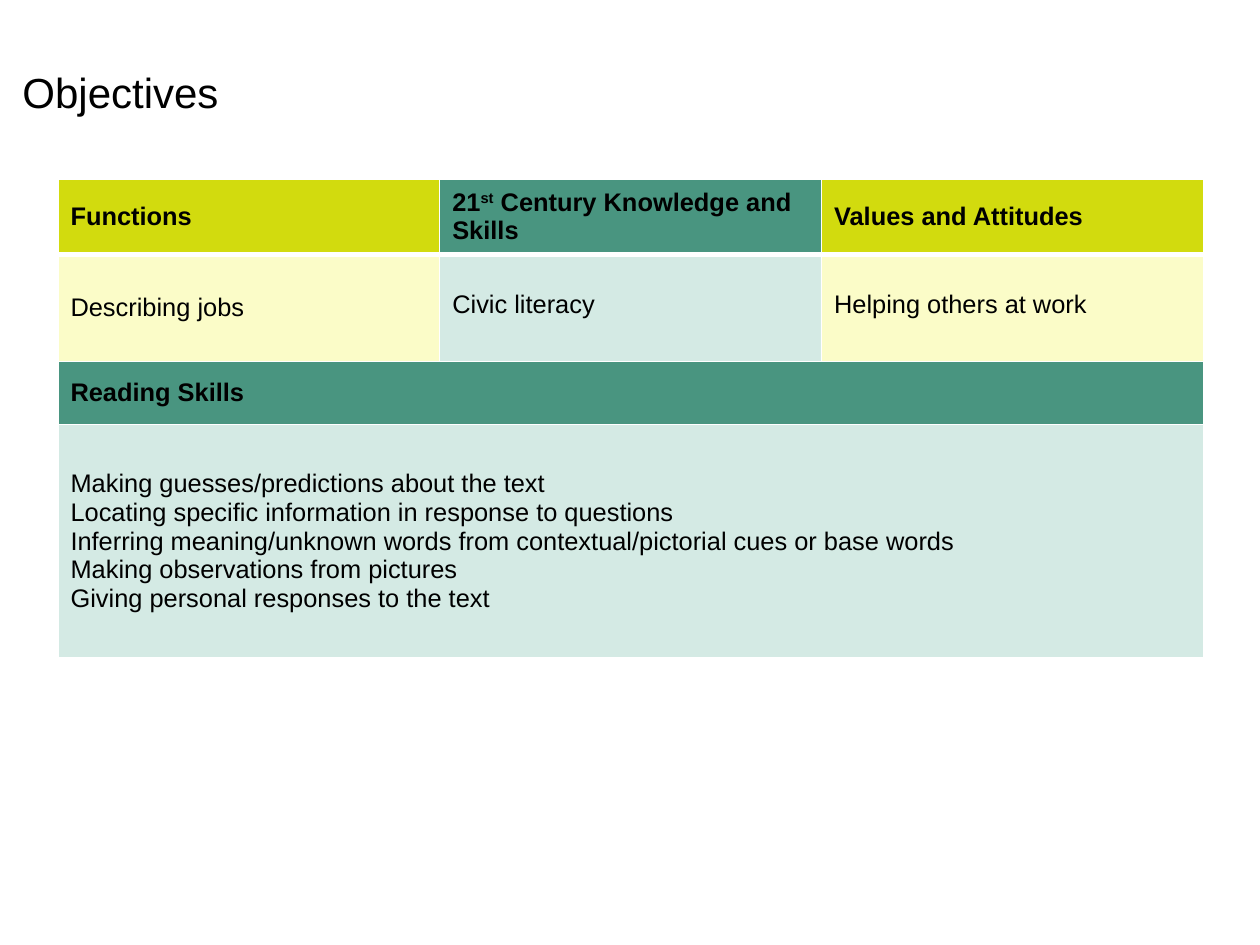
import pptx
import pptx.util
from lxml import etree
from pptx.dml.color import RGBColor
from pptx.enum.text import MSO_ANCHOR
from pptx.oxml.ns import qn

BLACK = RGBColor(0x00, 0x00, 0x00)
WHITE = RGBColor(0xFF, 0xFF, 0xFF)
LIME = RGBColor(0xD2, 0xDB, 0x0E)
CREAM = RGBColor(0xFB, 0xFC, 0xC8)
GREEN = RGBColor(0x49, 0x95, 0x80)
MINT = RGBColor(0xD4, 0xEA, 0xE4)

Inches = pptx.util.Inches
SLIDE_W, SLIDE_H = 10, 7.5
ROW_HEIGHTS = [0.6, 0.85, 0.5, 1.85]

HEADERS = [
    ("Functions", LIME),
    ([("21", False), ("st", True), (" Century Knowledge and Skills", False)], GREEN),
    ("Values and Attitudes", LIME),
]
# Text, fill and bottom inset of each objective
OBJECTIVES = [
    ("Describing jobs", CREAM, 0.05),
    ("Civic literacy", MINT, 0.11),
    ("Helping others at work", CREAM, 0.11),
]
READING_SKILLS = [
    "Making guesses/predictions about the text",
    "Locating specific information in response to questions",
    "Inferring meaning/unknown words from contextual/pictorial cues or base words",
    "Making observations from pictures",
    "Giving personal responses to the text",
]


def add_text(p, text, size=14.5, bold=False):
    """Fill a paragraph with a string, or with (string, superscript) pairs."""
    pieces = [(text, False)] if isinstance(text, str) else text
    for piece, superscript in pieces:
        r = p.add_run()
        r.text = piece
        r.font.name = "Arial"
        r.font.size = pptx.util.Pt(size)
        r.font.bold = bold
        r.font.color.rgb = BLACK
        if superscript:
            r._r.get_or_add_rPr().set("baseline", "30000")


def set_borders(cell, bottom=1):
    tc_pr = cell._tc.get_or_add_tcPr()
    widths = {"a:lnL": 1, "a:lnR": 1, "a:lnT": 1, "a:lnB": bottom}
    for i, (tag, width) in enumerate(widths.items()):
        ln = etree.Element(qn(tag), w=str(pptx.util.Pt(width)))
        fill = etree.SubElement(ln, qn("a:solidFill"))
        etree.SubElement(fill, qn("a:srgbClr"), val=str(WHITE))
        tc_pr.insert(i, ln)


def fill_cell(cell, lines, color, bold=False, inset=0.05, border=1):
    cell.fill.solid()
    cell.fill.fore_color.rgb = color
    cell.vertical_anchor = MSO_ANCHOR.MIDDLE
    cell.margin_bottom = Inches(inset)
    set_borders(cell, border)
    tf = cell.text_frame
    for i, line in enumerate(lines):
        p = tf.add_paragraph() if i else tf.paragraphs[0]
        add_text(p, line, bold=bold)


def add_title(slide, left, top, width, height):
    sp = slide.shapes.add_textbox(*map(Inches, (left, top, width, height)))
    tf = sp.text_frame
    tf.word_wrap = False
    add_text(tf.paragraphs[0], "Objectives", size=24)


def add_objectives_table(slide, left, top, width):
    height = sum(ROW_HEIGHTS)
    frame = slide.shapes.add_table(
        4, 3, *map(Inches, (left, top, width, height)))
    table = frame.table
    table.horz_banding = False
    for row, row_height in zip(table.rows, ROW_HEIGHTS):
        row.height = Inches(row_height)
    for column in table.columns:
        column.width = Inches(width / 3)

    # Three columns of objectives
    for i, (text, color) in enumerate(HEADERS):
        fill_cell(table.cell(0, i), [text], color, bold=True, border=3)
    for i, (text, color, inset) in enumerate(OBJECTIVES):
        fill_cell(table.cell(1, i), [text], color, inset=inset)

    # Reading skills across the full width
    for row in (2, 3):
        table.cell(row, 0).merge(table.cell(row, 2))
    fill_cell(table.cell(2, 0), ["Reading Skills"], GREEN, bold=True)
    fill_cell(table.cell(3, 0), READING_SKILLS, MINT)


def main():
    prs = pptx.Presentation()
    prs.slide_width, prs.slide_height = Inches(SLIDE_W), Inches(SLIDE_H)
    slide = prs.slides.add_slide(prs.slide_layouts[6])
    slide.background.fill.solid()
    slide.background.fill.fore_color.rgb = WHITE
    add_title(slide, 0.08, 0.48, 1.77, 0.5)
    add_objectives_table(slide, 0.46, 1.42, 9.09)
    prs.save("out.pptx")


if __name__ == "__main__":
    main()
